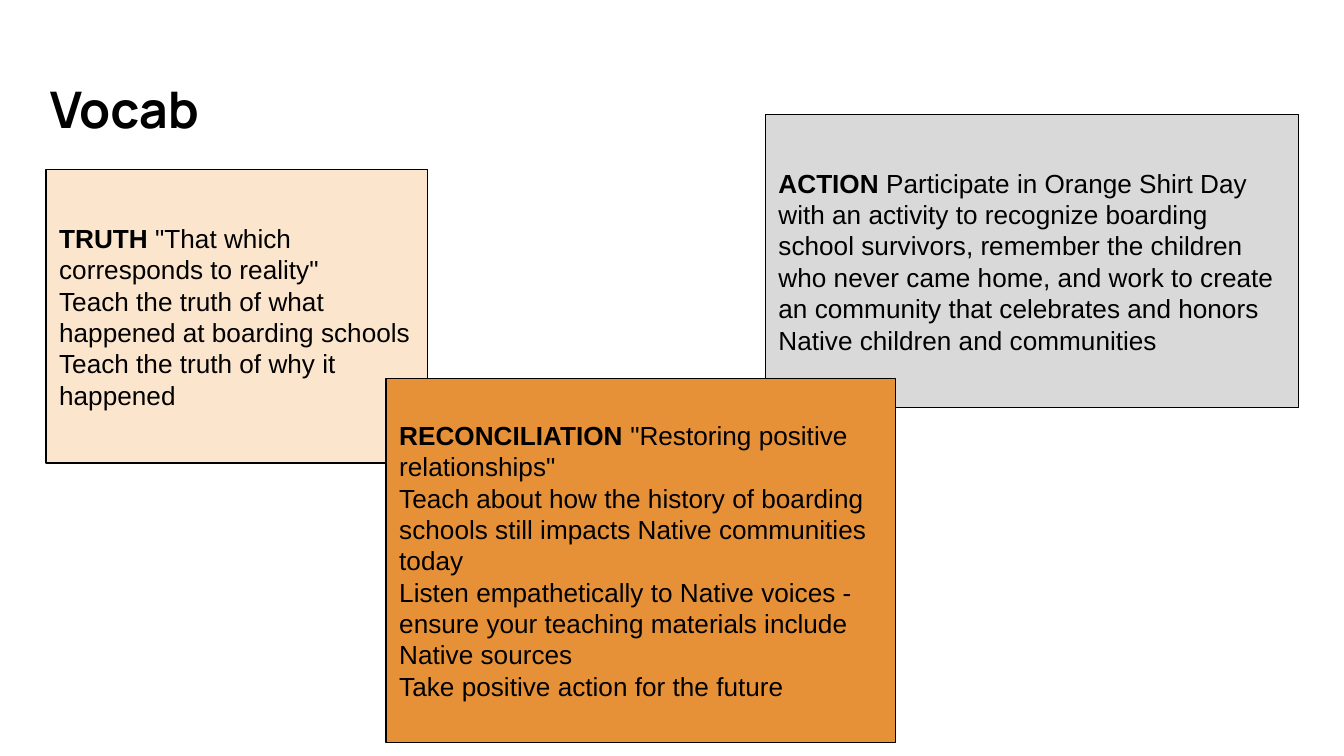
"""Build the Vocab slide with three overlapping definition cards."""
from dataclasses import dataclass

from pptx import Presentation
from pptx.dml.color import RGBColor
from pptx.enum.shapes import MSO_SHAPE
from pptx.enum.text import MSO_ANCHOR, PP_ALIGN
from pptx.util import Inches, Pt


@dataclass(frozen=True)
class Theme:
    """Hold the colours, fonts, type sizes and measures."""
    ink: str = "000000"
    paper: str = "FFFFFF"
    peach: str = "FCE5CD"
    grey: str = "D9D9D9"
    orange: str = "E69138"
    head: str = "Manrope"
    body: str = "Arial"
    large: int = 27
    small: int = 14
    line: float = 0.75
    inset: float = 0.1
    width: float = 10
    height: float = 10 * 9 / 16


THEME = Theme()

CARDS = [
    (THEME.peach, (3.42, 22.45, 28.4, 38.8), "TRUTH", [
        ' "That which corresponds to reality"',
        "Teach the truth of what happened at boarding schools "
        "Teach the truth of why it happened",
    ]),
    (THEME.grey, (56.94, 15.15, 39.7, 38.8), "ACTION", [
        " Participate in Orange Shirt Day with an activity to recognize "
        "boarding school survivors, remember the children who never came "
        "home, and work to create an community that celebrates and honors "
        "Native children and communities",
    ]),
    (THEME.orange, (28.72, 50.03, 37.9, 48.2), "RECONCILIATION ", [
        '"Restoring positive relationships"',
        "Teach about how the history of boarding schools still impacts "
        "Native communities today",
        "Listen empathetically to Native voices - ensure your teaching "
        "materials include Native sources",
        "Take positive action for the future",
    ]),
]


def place(box):
    """Turn percentages of the slide into left, top, width and height."""
    sides = (THEME.width, THEME.height) * 2
    return [Inches(part * side / 100) for part, side in zip(box, sides)]


def frame(shape, anchor):
    """Set the wrapping, anchor and insets of a shape's text."""
    text = shape.text_frame
    text.word_wrap = True
    text.vertical_anchor = anchor
    text.margin_left = text.margin_right = Inches(THEME.inset)
    text.margin_top = text.margin_bottom = Inches(THEME.inset)
    return text


def write(para, words, font, size, bold=False):
    """Add one styled run to a left-aligned paragraph."""
    para.alignment = PP_ALIGN.LEFT
    run = para.add_run()
    run.text = words
    run.font.name = font
    run.font.size = Pt(size)
    run.font.bold = bold
    run.font.color.rgb = RGBColor.from_string(THEME.ink)


def title(slide, words, box):
    """Add the slide's heading."""
    text = frame(slide.shapes.add_textbox(*place(box)), MSO_ANCHOR.TOP)
    write(text.paragraphs[0], words, THEME.head, THEME.large, True)


def card(slide, fill, box, term, lines):
    """Add a filled card with a bold term and its meaning."""
    shape = slide.shapes.add_shape(MSO_SHAPE.RECTANGLE, *place(box))
    shape.shadow.inherit = False
    shape.fill.solid()
    shape.fill.fore_color.rgb = RGBColor.from_string(fill)
    shape.line.color.rgb = RGBColor.from_string(THEME.ink)
    shape.line.width = Pt(THEME.line)
    text = frame(shape, MSO_ANCHOR.MIDDLE)
    para = text.paragraphs[0]
    write(para, term, THEME.body, THEME.small, True)
    write(para, lines[0], THEME.body, THEME.small)
    for line in lines[1:]:
        write(text.add_paragraph(), line, THEME.body, THEME.small)


def main():
    """Build and save the slide."""
    deck = Presentation()
    deck.slide_width = Inches(THEME.width)
    deck.slide_height = Inches(THEME.height)
    slide = deck.slides.add_slide(deck.slide_layouts[6])
    slide.background.fill.solid()
    slide.background.fill.fore_color.rgb = RGBColor.from_string(THEME.paper)
    title(slide, "Vocab", (2.73, 8.5, 93.2, 12.1))
    for item in CARDS:
        card(slide, *item)
    deck.save("out.pptx")


if __name__ == "__main__":
    main()
